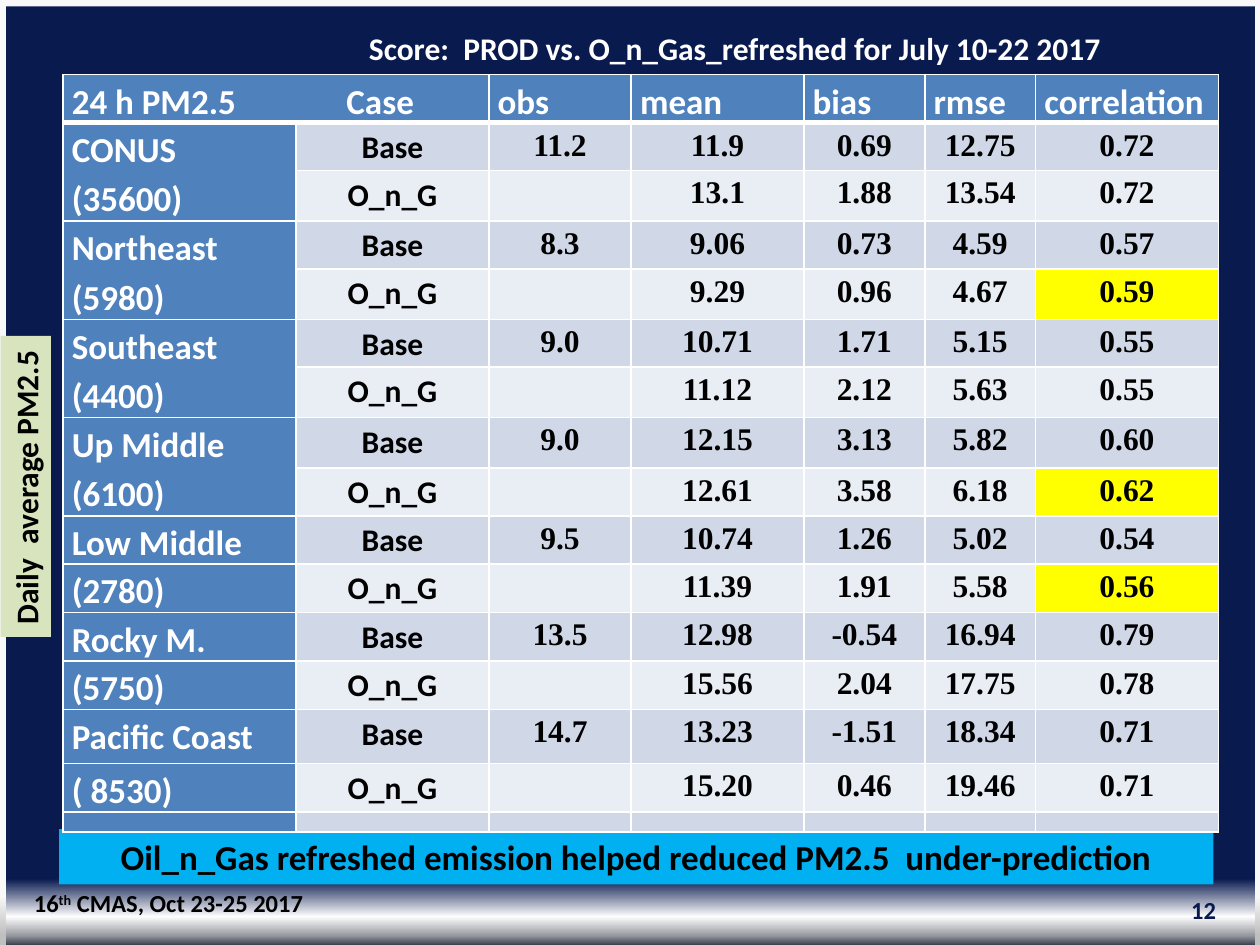
import pptx
import pptx.dml.color
import pptx.enum.shapes
import pptx.enum.text
import pptx.oxml
import pptx.oxml.ns
import pptx.util
from dataclasses import dataclass

Inches = pptx.util.Inches
Pt = pptx.util.Pt
Align = pptx.enum.text.PP_ALIGN
Anchor = pptx.enum.text.MSO_ANCHOR

HEADERS = ["24 h PM2.5\tCase", "obs", "mean", "bias", "rmse", "correlation"]
REGIONS = [
    ("CONUS", "(35600)", "11.2",
     ["11.9", "0.69", "12.75", "0.72"], ["13.1", "1.88", "13.54", "0.72"]),
    ("Northeast", "(5980)", "8.3",
     ["9.06", "0.73", "4.59", "0.57"], ["9.29", "0.96", "4.67", "0.59"]),
    ("Southeast", "(4400)", "9.0",
     ["10.71", "1.71", "5.15", "0.55"], ["11.12", "2.12", "5.63", "0.55"]),
    ("Up Middle", "(6100)", "9.0",
     ["12.15", "3.13", "5.82", "0.60"], ["12.61", "3.58", "6.18", "0.62"]),
    ("Low Middle", "(2780)", "9.5",
     ["10.74", "1.26", "5.02", "0.54"], ["11.39", "1.91", "5.58", "0.56"]),
    ("Rocky M.", "(5750)", "13.5",
     ["12.98", "-0.54", "16.94", "0.79"], ["15.56", "2.04", "17.75", "0.78"]),
    ("Pacific Coast", "( 8530)", "14.7",
     ["13.23", "-1.51", "18.34", "0.71"], ["15.20", "0.46", "19.46", "0.71"]),
]
MERGED_REGIONS = 4
HIGHLIGHTED = {"Northeast", "Up Middle", "Low Middle"}
COLUMN_WIDTHS = [1.85, 1.53, 1.13, 1.37, 0.96, 0.88, 1.45]
ROW_HEIGHTS = [0.38, 0.38, 0.4, 0.38, 0.4, 0.38, 0.4, 0.4] + [0.38] * 5 + [0.43, 0.38, 0.16]


@dataclass(frozen=True)
class Theme:
    font: str = "Calibri"
    number_font: str = "Times New Roman"
    navy: str = "091A4F"
    white: str = "FFFFFF"
    black: str = "000000"
    frame: str = "F8F8F8"
    header: str = "4F81BD"
    bands: tuple = ("D0D8E8", "E9EDF4")
    highlight: str = "FFFF00"
    banner: str = "00B0F0"
    label: str = "D7E4BD"
    large: int = 20
    body: int = 18
    small: int = 14
    empty: int = 8
    background: tuple = ((93, "091A4F"), (97, "FEFEFE"), (99, "9799A0"), (100, "3C414E"))
    side: tuple = ((0, "F8F8F8"), (95, "F5F5F5"), (99, "BFBFBF"))


THEME = Theme()
CELL_FORMAT = {"margin_left": Inches(0.07), "margin_right": Inches(0.07),
               "margin_top": 0, "margin_bottom": 0, "vertical_anchor": Anchor.TOP}

BARS = [((0, 0, 0.05, 7.5), THEME.side), ((0.02, 0, 9.98, 0.05), None),
        ((9.96, 0, 0.05, 7.5), THEME.side)]

PAGE_NUMBER = ((7.42, 7.02, 2.33, 0.4), ["12"], THEME.small, THEME.navy, None,
               {"word_wrap": True, "vertical_anchor": Anchor.MIDDLE}, Align.RIGHT, 0)
TITLE = ((2.83, 0.18, 6.07, 0.4), ["Score:  PROD vs. O_n_Gas_refreshed for July 10-22 2017"],
         THEME.body, THEME.white, None, {"word_wrap": False}, Align.LEFT, 0)
BANNER = ((0.47, 6.58, 9.16, 0.44),
          ["Oil_n_Gas refreshed emission helped reduced PM2.5  under-prediction"],
          THEME.large, THEME.black, THEME.banner, {"word_wrap": True}, Align.CENTER, 0)
SIDE_LABEL = ((-0.99, 3.66, 2.39, 0.4), ["Daily  average PM2.5"], THEME.body, THEME.black,
              THEME.label, {"word_wrap": False}, Align.LEFT, 270)
FOOTER = ((0.17, 7, 2.35, 0.34), ["16", "th", " CMAS, Oct 23-25 2017"], THEME.small,
          THEME.black, None, {"word_wrap": False}, Align.LEFT, 0)


def apply(target, values):
    for name, value in values.items():
        setattr(target, name, value)


def rgb(color):
    return pptx.dml.color.RGBColor.from_string(color)


def drawing(markup):
    namespace = pptx.oxml.ns.nsdecls("a")
    return pptx.oxml.parse_xml(f"<a:holder {namespace}>{markup}</a:holder>")[0]


def fill_solid(fill, color):
    fill.solid()
    fill.fore_color.rgb = rgb(color)


def fill_gradient(fill, element, stops):
    fill.solid()
    solid = element.find(".//" + pptx.oxml.ns.qn("a:solidFill"))
    marks = "".join(f'<a:gs pos="{position * 1000}"><a:srgbClr val="{color}"/></a:gs>'
                    for position, color in stops)
    solid.getparent().replace(solid, drawing(
        f'<a:gradFill rotWithShape="1"><a:gsLst>{marks}</a:gsLst>'
        '<a:lin ang="5400000" scaled="0"/></a:gradFill>'))


def add_run(paragraph, text, size, color, font=THEME.font):
    run = paragraph.add_run()
    run.text = text
    apply(run.font, {"size": Pt(size), "name": font, "bold": True})
    run.font.color.rgb = rgb(color)
    return run


def add_bar(slide, box, stops):
    shape = slide.shapes.add_shape(pptx.enum.shapes.MSO_SHAPE.RECTANGLE, *map(Inches, box))
    shape.shadow.inherit = False
    if stops:
        fill_gradient(shape.fill, shape._element, stops)
    else:
        fill_solid(shape.fill, THEME.frame)
    shape.line.fill.background()


def add_text(slide, box, texts, size, color, fill, frame_format, alignment, rotation):
    shape = slide.shapes.add_textbox(*map(Inches, box))
    shape.rotation = rotation
    if fill:
        fill_solid(shape.fill, fill)
    apply(shape.text_frame, frame_format)
    paragraph = shape.text_frame.paragraphs[0]
    paragraph.alignment = alignment
    for text in texts:
        run = add_run(paragraph, text, size, color)
        if text == "th":
            run._r.get_or_add_rPr().set("baseline", "30000")


def format_cell(cell, fill, bottom=1):
    apply(cell, CELL_FORMAT)
    properties = cell._tc.get_or_add_tcPr()
    for side, width in (("L", 1), ("R", 1), ("T", 1), ("B", bottom)):
        properties.append(drawing(
            f'<a:ln{side} w="{int(Pt(width))}"><a:solidFill><a:srgbClr val="{THEME.white}"/>'
            f'</a:solidFill></a:ln{side}>'))
    fill_solid(cell.fill, fill)


def write_cell(cell, text, size, color, font=THEME.font, alignment=Align.LEFT):
    paragraph = cell.text_frame.paragraphs[0]
    if not text:
        paragraph._p.append(drawing(f'<a:endParaRPr sz="{THEME.empty * 100}"/>'))
        return
    apply(paragraph, {"alignment": alignment, "line_spacing": 1.15, "space_after": Pt(3)})
    if "\t" in text:
        paragraph._p.get_or_add_pPr().append(drawing(
            f'<a:tabLst><a:tab pos="{int(Inches(2.18))}" algn="l"/></a:tabLst>'))
    add_run(paragraph, text, size, color, font)


def table_rows():
    rows = [HEADERS[:1] + [""] + HEADERS[1:]]
    for index, (region, count, observed, base, refreshed) in enumerate(REGIONS):
        merged = index < MERGED_REGIONS
        rows.append([f"{region} {count}" if merged else region, "Base", observed] + base)
        rows.append(["" if merged else count, "O_n_G", ""] + refreshed)
    return rows + [[""] * len(COLUMN_WIDTHS)]


def add_scores(slide):
    rows = table_rows()
    table = slide.shapes.add_table(len(rows), len(COLUMN_WIDTHS), Inches(0.5), Inches(0.59),
                                   Inches(9.16), Inches(6.02)).table
    apply(table, {"first_row": False, "horz_banding": False})
    for column, width in zip(table.columns, COLUMN_WIDTHS):
        column.width = Inches(width)
    for row, height in zip(table.rows, ROW_HEIGHTS):
        row.height = Inches(height)
    highlighted = {2 * index + 2 for index, region in enumerate(REGIONS)
                   if region[0] in HIGHLIGHTED}
    last_column = len(COLUMN_WIDTHS) - 1
    for row, texts in enumerate(rows):
        for column, text in enumerate(texts):
            cell = table.cell(row, column)
            if row == 0 or column == 0:
                format_cell(cell, THEME.header, 1 if row else 3)
                write_cell(cell, text, THEME.large, THEME.white)
                continue
            marked = row in highlighted and column == last_column
            format_cell(cell, THEME.highlight if marked else THEME.bands[(row - 1) % 2])
            font = THEME.font if column == 1 else THEME.number_font
            write_cell(cell, text, THEME.body, THEME.black, font, Align.CENTER)
    table.cell(0, 0).merge(table.cell(0, 1))
    for index in range(MERGED_REGIONS):
        top = 2 * index + 1
        table.cell(top, 0).merge(table.cell(top + 1, 0))


def main():
    presentation = pptx.Presentation()
    apply(presentation, {"slide_width": Inches(10), "slide_height": Inches(7.5)})
    slide = presentation.slides.add_slide(presentation.slide_layouts[6])
    fill_gradient(slide.background.fill, slide._element, THEME.background)
    for box, stops in BARS:
        add_bar(slide, box, stops)
    for item in (PAGE_NUMBER, TITLE, BANNER, SIDE_LABEL):
        add_text(slide, *item)
    add_scores(slide)
    add_text(slide, *FOOTER)
    presentation.save("out.pptx")


if __name__ == "__main__":
    main()
